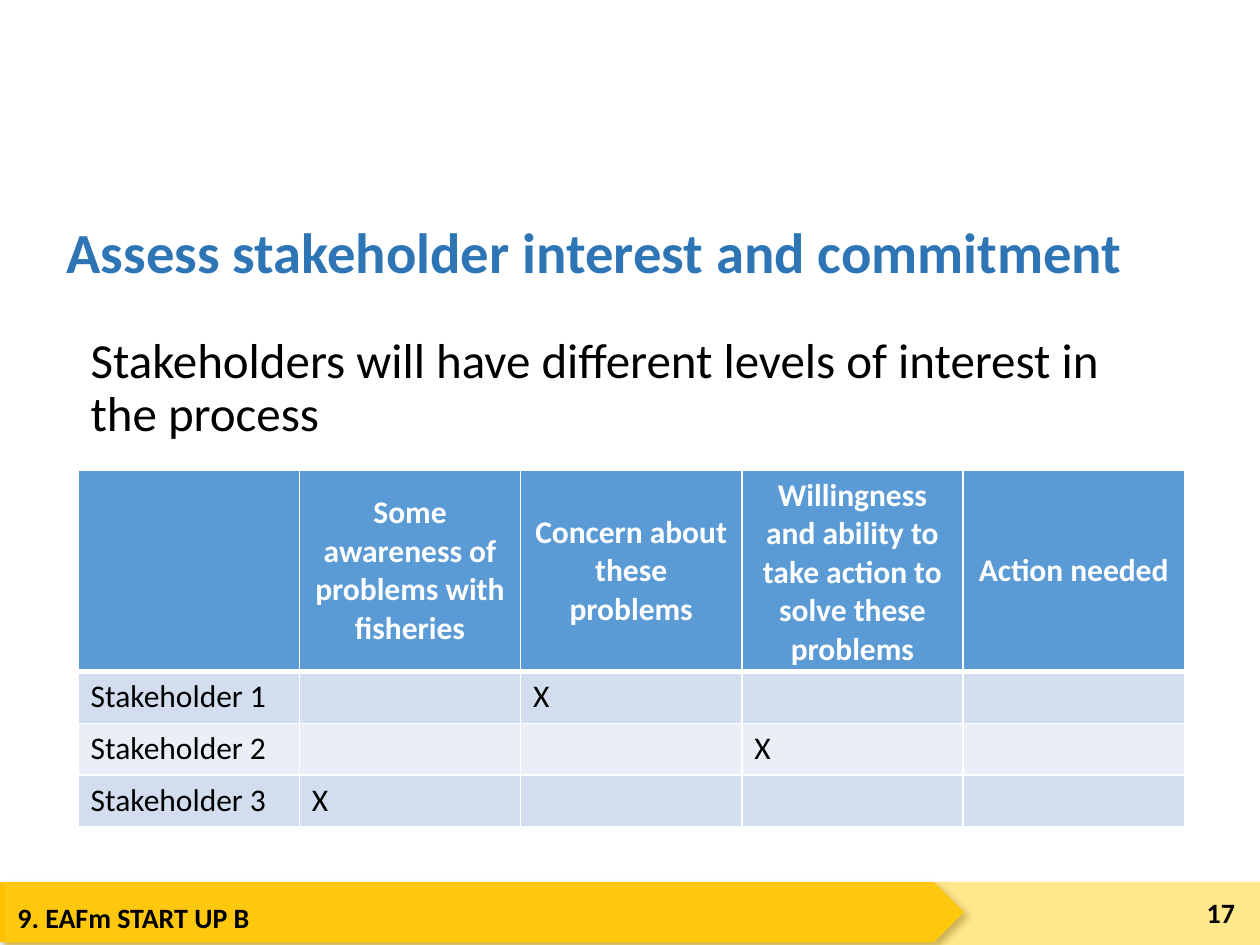
from lxml.etree import SubElement
from pptx import Presentation
from pptx.dml.color import RGBColor
from pptx.enum.shapes import MSO_SHAPE
from pptx.enum.text import MSO_ANCHOR, PP_ALIGN
from pptx.oxml import parse_xml
from pptx.oxml.ns import nsdecls, qn
from pptx.util import Inches, Pt

# Content
TITLE = "Assess stakeholder interest and commitment"
BODY = "Stakeholders will have different levels of interest in the process"
FOOTER, NUMBER = "9. EAFm START UP B", "17"
HEADERS = ["", "Some awareness of problems with fisheries", "Concern about these problems",
           "Willingness and ability to take action to solve these problems", "Action needed"]
MARKS = [("Stakeholder 1", 2), ("Stakeholder 2", 3), ("Stakeholder 3", 1)]  # column of the X
HEAD_FILL, BANDS = "5B9BD5", ("D2DEEF", "EAEFF7")
BLACK, WHITE, BLUE = "000000", "FFFFFF", "2E75B6"

# Layout in inches
W, H = 10, 7.5
FOOT_TOP = 7
TABLE_LEFT, TABLE_TOP, TABLE_W = 0.62, 3.73, 8.78
HEAD_H, ROW_H = 1.59, 0.41


def rgb(color):
    return RGBColor.from_string(color)


def write(tf, text, size, color=BLACK, bold=False, align=PP_ALIGN.LEFT, spacing=None):
    p = tf.paragraphs[0]
    p.alignment = align
    if spacing:
        p.line_spacing = spacing
    r = p.add_run()
    r.text = text
    r.font.name, r.font.size, r.font.bold = "Calibri", Pt(size), bold
    r.font.color.rgb = rgb(color)


def add_text(s, box, text, size, anchor=MSO_ANCHOR.TOP, **style):
    tf = s.shapes.add_textbox(*map(Inches, box)).text_frame
    tf.word_wrap = True
    tf.vertical_anchor = anchor
    write(tf, text, size, **style)


def add_bar(s, kind, box, color):
    sp = s.shapes.add_shape(kind, *map(Inches, box))
    sp.shadow.inherit = False
    sp.fill.solid()
    sp.fill.fore_color.rgb = rgb(color)
    sp.line.fill.background()
    return sp


def set_borders(cell, bottom):
    tcPr = cell._tc.get_or_add_tcPr()
    for i, (side, width) in enumerate([("L", 1), ("R", 1), ("T", 1), ("B", bottom)]):
        tcPr.insert(i, parse_xml(
            f'<a:ln{side} {nsdecls("a")} w="{Pt(width)}"><a:solidFill>'
            f'<a:srgbClr val="{WHITE}"/></a:solidFill></a:ln{side}>'))


prs = Presentation()
prs.slide_width, prs.slide_height = Inches(W), Inches(H)
s = prs.slides.add_slide(prs.slide_layouts[6])

# Footer band: arrow with a soft shadow under a translucent strip
arrow = add_bar(s, MSO_SHAPE.PENTAGON, (0, FOOT_TOP, 7.65, 0.48), "FFC000")
effects = arrow._element.spPr.find(qn("a:effectLst"))
effects.append(parse_xml(
    f'<a:outerShdw {nsdecls("a")} blurRad="{Pt(4)}" dist="{Pt(3)}" dir="2700000" algn="tl" '
    'rotWithShape="0"><a:srgbClr val="000000"><a:alpha val="40000"/></a:srgbClr></a:outerShdw>'))
strip = add_bar(s, MSO_SHAPE.RECTANGLE, (0.04, FOOT_TOP, W - 0.04, 0.53), "FFD01B")
SubElement(strip._element.spPr.find(".//" + qn("a:srgbClr")), qn("a:alpha")).set("val", "50000")
add_text(s, (0.04, 7.1, 7.35, 0.41), FOOTER, 16, bold=True)

# Title, slide number and lead sentence
add_text(s, (0.43, 1.63, 8.88, 0.82), TITLE, 32.4, MSO_ANCHOR.MIDDLE,
         color=BLUE, bold=True, spacing=0.8)
add_text(s, (9.17, 7.04, 0.73, 0.4), NUMBER, 16, MSO_ANCHOR.MIDDLE,
         bold=True, align=PP_ALIGN.RIGHT)
add_text(s, (0.62, 2.62, 8.62, 0.95), BODY, 28, spacing=0.9)

# Table of stakeholders
rows = [HEADERS] + [[name] + ["X" if c == mark else "" for c in range(1, len(HEADERS))]
                    for name, mark in MARKS]
heights = [HEAD_H] + [ROW_H] * len(MARKS)
table = s.shapes.add_table(len(rows), len(HEADERS), Inches(TABLE_LEFT), Inches(TABLE_TOP),
                           Inches(TABLE_W), Inches(sum(heights))).table
for i, (row, height) in enumerate(zip(rows, heights)):
    table.rows[i].height = Inches(height)
    head = i == 0
    for j, text in enumerate(row):
        cell = table.cell(i, j)
        cell.fill.solid()
        cell.fill.fore_color.rgb = rgb(HEAD_FILL if head else BANDS[(i - 1) % 2])
        set_borders(cell, 3 if head else 1)
        if head:
            cell.vertical_anchor = MSO_ANCHOR.MIDDLE
        if text:
            write(cell.text_frame, text, 18, WHITE if head else BLACK, head,
                  PP_ALIGN.CENTER if head else PP_ALIGN.LEFT)

prs.save("out.pptx")
